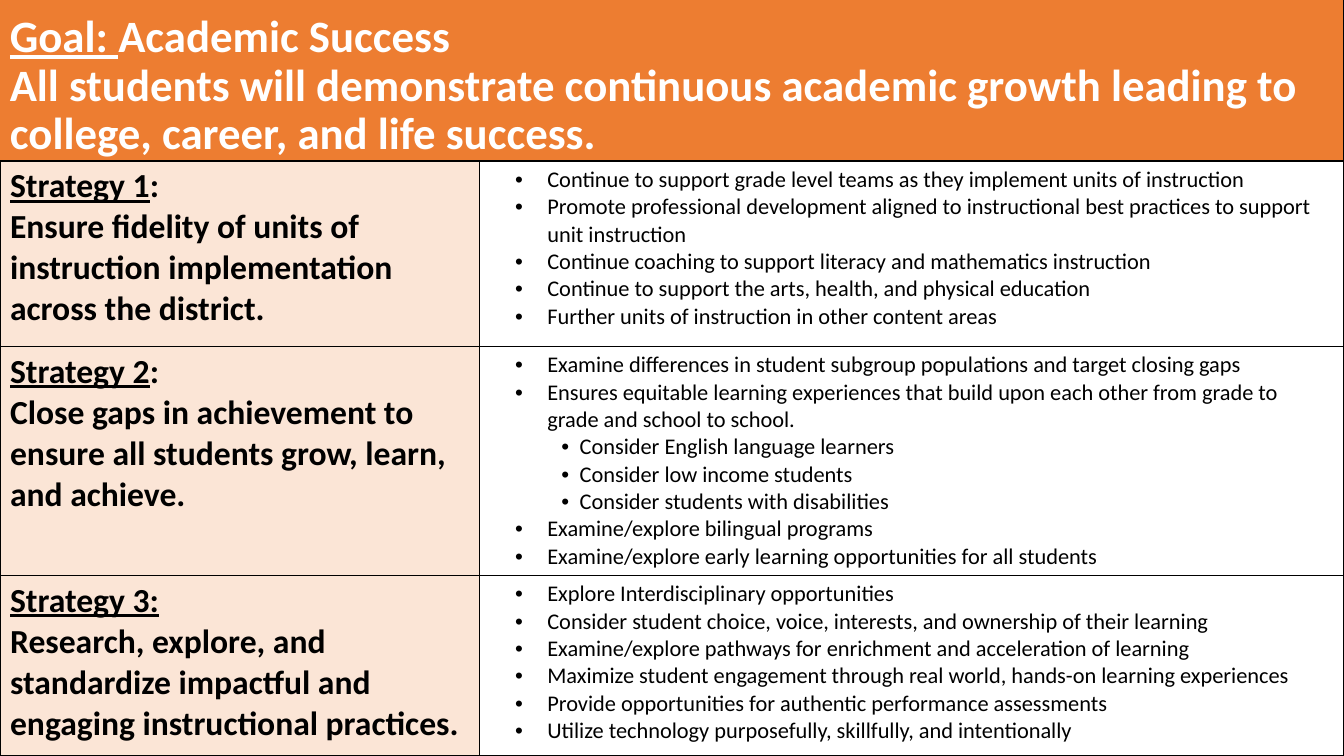
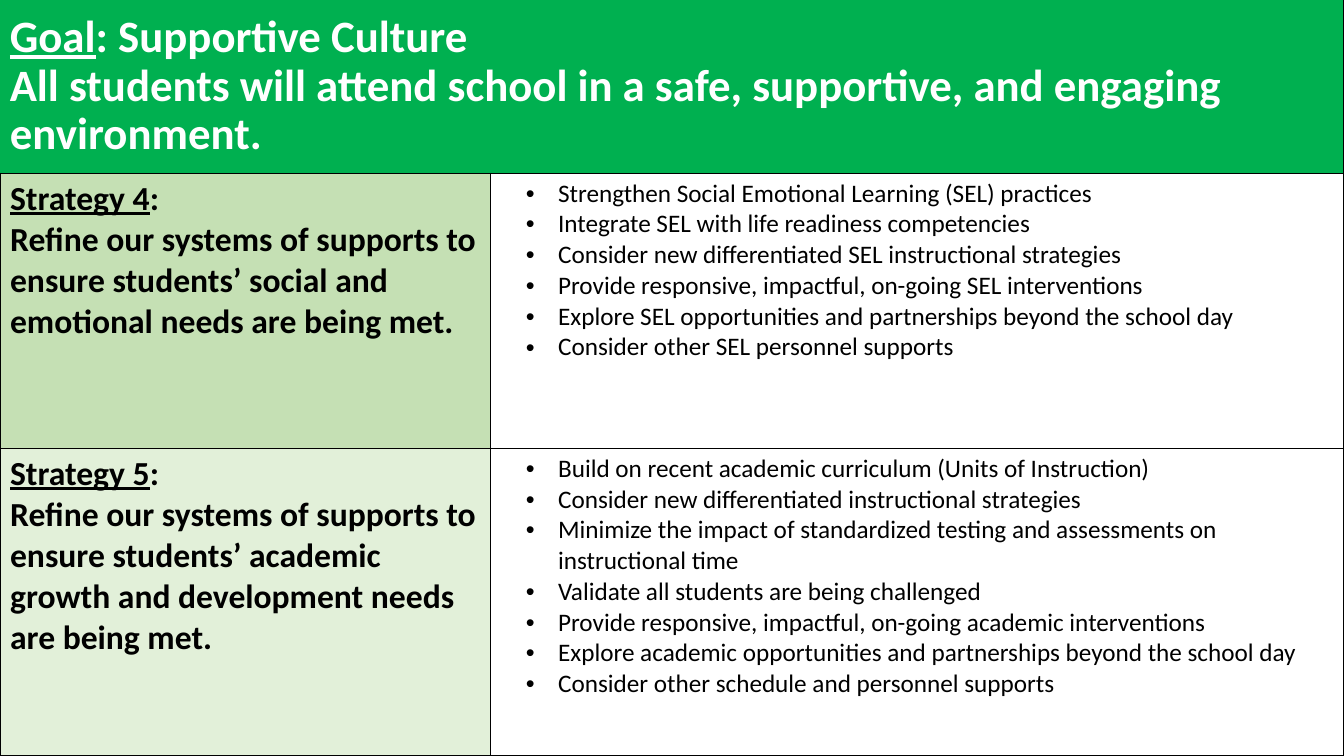
from dataclasses import dataclass

from pptx import Presentation
from pptx.dml.color import RGBColor
from pptx.enum import shapes, text
from pptx.oxml.ns import qn
from pptx.slide import Slide
from pptx.util import Inches, Pt
from lxml import etree

WIDTH, HEIGHT = Inches(13.33), Inches(7.5)
BAND_SHARE = 22.9
FONT = "Calibri"
GOAL_SIZE, STRATEGY_SIZE = 32, 24
BULLET_INDENTS = {0: (0.57, 0.32), 1: (0.89, 0.18)}
COLORS = {
    "backdrop": "5B9BD5",
    "line": "000000",
    "ink": "000000",
    "paper": "FFFFFF",
    "orange": "ED7D31",
    "peach": "FBE5D6",
    "green": "00B050",
    "sage": "C5E0B4",
    "mint": "E2F0D9",
}


@dataclass(frozen=True)
class Action:
    wording: str
    level: int = 0


@dataclass(frozen=True)
class Strategy:
    label: str
    after_label: str
    statement: str
    tint: str
    height_share: float
    actions: tuple[Action, ...]


@dataclass(frozen=True)
class Goal:
    label: str
    name: str
    statement: str
    band: str
    table_top: float
    split_share: float
    action_size: int
    strategies: tuple[Strategy, ...]


GOALS = (
    Goal(
        "Goal: ", "Academic Success",
        "All students will demonstrate continuous academic growth leading to "
        "college, career, and life success.",
        "orange", 21.3, 35.7, 16,
        (
            Strategy(
                "Strategy 1", ":",
                "Ensure fidelity of units of instruction implementation across the district.",
                "peach", 24.5,
                (
                    Action("Continue to support grade level teams as they implement units of instruction"),
                    Action("Promote professional development aligned to instructional best practices "
                           "to support unit instruction"),
                    Action("Continue coaching to support literacy and mathematics instruction"),
                    Action("Continue to support the arts, health, and physical education"),
                    Action("Further units of instruction in other content areas"),
                ),
            ),
            Strategy(
                "Strategy 2", ":",
                "Close gaps in achievement to ensure all students grow, learn, and achieve.",
                "peach", 30.3,
                (
                    Action("Examine differences in student subgroup populations and target closing gaps"),
                    Action("Ensures equitable learning experiences that build upon each other "
                           "from grade to grade and school to school."),
                    Action("Consider English language learners", 1),
                    Action("Consider low income students", 1),
                    Action("Consider students with disabilities", 1),
                    Action("Examine/explore bilingual programs"),
                    Action("Examine/explore early learning opportunities for all students"),
                ),
            ),
            Strategy(
                "Strategy 3:", "",
                "Research, explore, and standardize impactful and engaging instructional practices.",
                "peach", 23.9,
                (
                    Action("Explore Interdisciplinary opportunities"),
                    Action("Consider student choice, voice, interests, and ownership of their learning"),
                    Action("Examine/explore pathways for enrichment and acceleration of learning"),
                    Action("Maximize student engagement through real world, hands-on learning experiences"),
                    Action("Provide opportunities for authentic performance assessments"),
                    Action("Utilize technology purposefully, skillfully, and intentionally"),
                ),
            ),
        ),
    ),
    Goal(
        "Goal", ": Supportive Culture",
        "All students will attend school in a safe, supportive, and engaging environment.",
        "green", BAND_SHARE, 36.5, 18,
        (
            Strategy(
                "Strategy 4", ":",
                "Refine our systems of supports to ensure students’ social and "
                "emotional needs are being met.",
                "sage", 36.4,
                (
                    Action("Strengthen Social Emotional Learning (SEL) practices"),
                    Action("Integrate SEL with life readiness competencies"),
                    Action("Consider new differentiated SEL instructional strategies"),
                    Action("Provide responsive, impactful, on-going SEL interventions"),
                    Action("Explore SEL opportunities and partnerships beyond the school day"),
                    Action("Consider other SEL personnel supports"),
                ),
            ),
            Strategy(
                "Strategy 5", ":",
                "Refine our systems of supports to ensure students’ academic growth "
                "and development needs are being met.",
                "mint", 40.7,
                (
                    Action("Build on recent academic curriculum (Units of Instruction)"),
                    Action("Consider new differentiated instructional strategies"),
                    Action("Minimize the impact of standardized testing and assessments on instructional time"),
                    Action("Validate all students are being challenged"),
                    Action("Provide responsive, impactful, on-going academic interventions"),
                    Action("Explore academic opportunities and partnerships beyond the school day"),
                    Action("Consider other schedule and personnel supports"),
                ),
            ),
        ),
    ),
)


def color(name: str) -> RGBColor:
    return RGBColor.from_string(COLORS[name])


def share(percent: float, whole: int) -> int:
    return round(whole * percent / 100)


def paint(target, name: str) -> None:
    target.fill.solid()
    target.fill.fore_color.rgb = color(name)


def style_runs(paragraph, size: int, ink: str, bold: bool) -> None:
    for run in paragraph.runs:
        run.font.name = FONT
        run.font.size = Pt(size)
        run.font.bold = bold
        run.font.color.rgb = color(ink)


def write_heading(paragraph, label: str, rest: str) -> None:
    paragraph.text = label
    paragraph.runs[0].font.underline = True
    if rest:
        paragraph.add_run().text = rest


def add_bullet(paragraph, level: int) -> None:
    margin, hanging = BULLET_INDENTS[level]
    properties = paragraph._p.get_or_add_pPr()
    properties.set("marL", str(Inches(margin)))
    properties.set("indent", str(-Inches(hanging)))
    etree.SubElement(properties, qn("a:buFont")).set("typeface", "Arial")
    etree.SubElement(properties, qn("a:buChar")).set("char", "•")


def add_borders(cell) -> None:
    properties = cell._tc.get_or_add_tcPr()
    for side in ("lnL", "lnR", "lnT", "lnB"):
        border = etree.SubElement(properties, qn(f"a:{side}"))
        border.set("w", str(Pt(1)))
        solid = etree.SubElement(border, qn("a:solidFill"))
        etree.SubElement(solid, qn("a:srgbClr")).set("val", COLORS["line"])


def draw_band(slide: Slide, goal: Goal) -> None:
    band = slide.shapes.add_shape(
        shapes.MSO_SHAPE.RECTANGLE, 0, 0, WIDTH, share(BAND_SHARE, HEIGHT))
    band.shadow.inherit = False
    paint(band, goal.band)
    band.line.color.rgb = color("line")
    band.line.width = Pt(0.75)
    frame = band.text_frame
    frame.word_wrap = True
    frame.vertical_anchor = text.MSO_ANCHOR.MIDDLE
    heading = frame.paragraphs[0]
    write_heading(heading, goal.label, goal.name)
    heading.add_line_break()
    heading.add_run().text = goal.statement
    heading.alignment = text.PP_ALIGN.LEFT
    heading.line_spacing = 0.9
    style_runs(heading, GOAL_SIZE, "paper", True)


def fill_strategy(cell, strategy: Strategy) -> None:
    frame = cell.text_frame
    write_heading(frame.paragraphs[0], strategy.label, strategy.after_label)
    frame.add_paragraph().text = strategy.statement
    for paragraph in frame.paragraphs:
        style_runs(paragraph, STRATEGY_SIZE, "ink", True)


def fill_actions(cell, actions: tuple[Action, ...], size: int) -> None:
    frame = cell.text_frame
    frame.text = "\n".join(action.wording for action in actions)
    for paragraph, action in zip(frame.paragraphs, actions):
        add_bullet(paragraph, action.level)
        style_runs(paragraph, size, "ink", False)


def draw_strategies(slide: Slide, goal: Goal) -> None:
    top = share(goal.table_top, HEIGHT)
    table = slide.shapes.add_table(
        len(goal.strategies), 2, 0, top, WIDTH, HEIGHT - top).table
    table.first_row = False
    table.horz_banding = False
    split = share(goal.split_share, WIDTH)
    table.columns[0].width = split
    table.columns[1].width = WIDTH - split
    for row, strategy in zip(table.rows, goal.strategies):
        row.height = share(strategy.height_share, HEIGHT)
        for cell, tint in zip(row.cells, (strategy.tint, "paper")):
            add_borders(cell)
            paint(cell, tint)
        fill_strategy(row.cells[0], strategy)
        fill_actions(row.cells[1], strategy.actions, goal.action_size)


def main() -> None:
    deck = Presentation()
    deck.slide_width, deck.slide_height = WIDTH, HEIGHT
    for goal in GOALS:
        slide = deck.slides.add_slide(deck.slide_layouts[6])
        paint(slide.background, "backdrop")
        draw_band(slide, goal)
        draw_strategies(slide, goal)
    deck.save("out.pptx")


if __name__ == "__main__":
    main()
